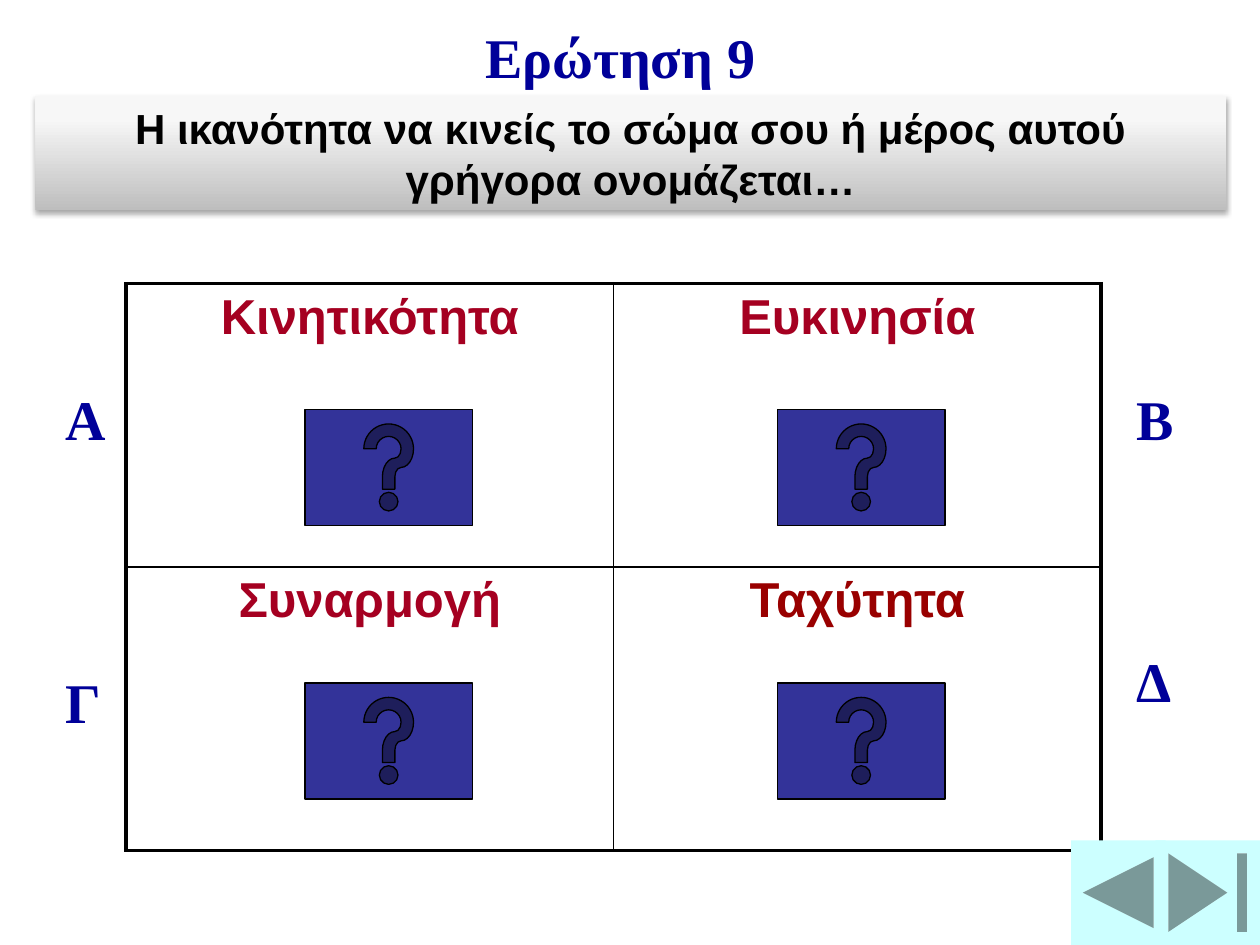
from copy import deepcopy

from lxml import etree
from pptx import Presentation
from pptx.dml.color import RGBColor
from pptx.enum.shapes import MSO_SHAPE
from pptx.enum.text import MSO_ANCHOR, PP_ALIGN
from pptx.oxml.ns import qn
from pptx.util import Inches, Pt

CENTER, LEFT = PP_ALIGN.CENTER, PP_ALIGN.LEFT
TOP, MIDDLE = MSO_ANCHOR.TOP, MSO_ANCHOR.MIDDLE
RECTANGLE = MSO_SHAPE.RECTANGLE
HELP_BUTTON = MSO_SHAPE.ACTION_BUTTON_HELP
END_BUTTON = MSO_SHAPE.ACTION_BUTTON_END
BACK_BUTTON = MSO_SHAPE.ACTION_BUTTON_BACK_OR_PREVIOUS
TITLE_ONLY = 5

COLORS = {
    "heading": "000099", "answer": "A50021", "speed": "990000",
    "help": "333399", "navigation": "CCFFFF",
    "black": "000000", "white": "FFFFFF",
}
SERIF, SANS = "Times New Roman", "Arial"
BANNER_STOPS = [(0, "BEBEBE"), (0.8, "F7F7F7"), (1, "F8F8F8")]
ANSWERS = [
    [("Κινητικότητα", "answer"), ("Ευκινησία", "answer")],
    [("Συναρμογή", "answer"), ("Ταχύτητα", "speed")],
]
LETTERS = [("Α", 0.42, 3), ("Γ", 0.42, 5.25), ("Β", 8.92, 3), ("Δ", 8.92, 5.08)]
OUTER_BORDER, INNER_BORDER = 2.25, 1


def rgb(name):
    return RGBColor.from_string(COLORS[name])


def write(frame, text, size, font, color, align, anchor=TOP):
    frame.word_wrap = True
    frame.vertical_anchor = anchor
    paragraph = frame.paragraphs[0]
    paragraph.alignment = align
    run = paragraph.add_run()
    run.text = text
    run.font.size = Pt(size)
    run.font.name = font
    run.font.bold = True
    run.font.color.rgb = rgb(color)


def add_heading(slide, text):
    heading = slide.shapes.title
    heading.left, heading.top = Inches(3.75), Inches(0.13)
    heading.width, heading.height = Inches(2.67), Inches(0.64)
    write(heading.text_frame, text, 32, SERIF, "heading", LEFT)


def add_letter(slide, letter, left, top):
    label = slide.shapes.add_textbox(Inches(left), Inches(top), Inches(0.5), Inches(0.63))
    write(label.text_frame, letter, 32, SERIF, "heading", LEFT)


def add_button(slide, kind, left, top, width, height, color, outlined=False):
    button = slide.shapes.add_shape(
        kind, Inches(left), Inches(top), Inches(width), Inches(height))
    button.shadow.inherit = False
    button.fill.solid()
    button.fill.fore_color.rgb = rgb(color)
    if outlined:
        button.line.color.rgb = rgb("black")
        button.line.width = Pt(0.75)
    else:
        button.line.fill.background()


def set_border(cell, side, width):
    line = etree.SubElement(cell._tc.get_or_add_tcPr(), qn(f"a:ln{side}"), w=str(Pt(width)))
    fill = etree.SubElement(line, qn("a:solidFill"))
    etree.SubElement(fill, qn("a:srgbClr"), val=COLORS["black"])


def add_answer_table(slide):
    table = slide.shapes.add_table(
        2, 2, Inches(1), Inches(2.25), Inches(7.74), Inches(4.5)).table
    for row, answers in enumerate(ANSWERS):
        for column, (answer, color) in enumerate(answers):
            cell = table.cell(row, column)
            # Heavy lines run only around the outside
            outer_sides = ("LR"[column], "TB"[row])
            for side in "LRTB":
                set_border(cell, side, OUTER_BORDER if side in outer_sides else INNER_BORDER)
            cell.fill.solid()
            cell.fill.fore_color.rgb = rgb("white")
            write(cell.text_frame, answer, 28, SANS, color, CENTER)


def add_question_banner(slide, question):
    banner = slide.shapes.add_shape(
        RECTANGLE, Inches(0.28), Inches(0.76), Inches(9.45), Inches(0.91))
    banner.line.fill.background()

    # Three-stop gradient, dark at the bottom
    banner.fill.gradient()
    banner.fill.gradient_angle = 90
    properties = banner._element.spPr
    stop_list = properties.find(".//" + qn("a:gsLst"))
    stop_list.append(deepcopy(stop_list[-1]))
    for stop, (position, color) in zip(banner.fill.gradient_stops, BANNER_STOPS):
        stop.position = position
        stop.color.rgb = RGBColor.from_string(color)

    # Soft shadow straight below
    banner.shadow.inherit = False
    shadow = etree.SubElement(
        properties.find(qn("a:effectLst")), qn("a:outerShdw"),
        blurRad=str(Pt(3.1)), dist=str(Pt(1.8)), dir="5400000", rotWithShape="0")
    shade = etree.SubElement(shadow, qn("a:srgbClr"), val=COLORS["black"])
    etree.SubElement(shade, qn("a:alpha"), val="35000")

    write(banner.text_frame, question, 24, SANS, "black", CENTER, MIDDLE)


def main():
    presentation = Presentation()
    presentation.slide_width, presentation.slide_height = Inches(10), Inches(7.5)
    slide = presentation.slides.add_slide(presentation.slide_layouts[TITLE_ONLY])

    # Answers and their letters
    add_answer_table(slide)
    for letter, left, top in LETTERS:
        add_letter(slide, letter, left, top)
    add_heading(slide, "Ερώτηση 9")

    # One help button per answer
    for left in (2.42, 6.17):
        for top in (5.42, 3.25):
            add_button(slide, HELP_BUTTON, left, top, 1.33, 0.92, "help", outlined=True)

    # Navigation
    add_button(slide, END_BUTTON, 9.17, 6.67, 0.83, 0.83, "navigation")
    add_button(slide, BACK_BUTTON, 8.5, 6.67, 0.75, 0.83, "navigation")

    add_question_banner(
        slide, "Η ικανότητα να κινείς το σώμα σου ή μέρος αυτού γρήγορα ονομάζεται…")
    presentation.save("out.pptx")


if __name__ == "__main__":
    main()
